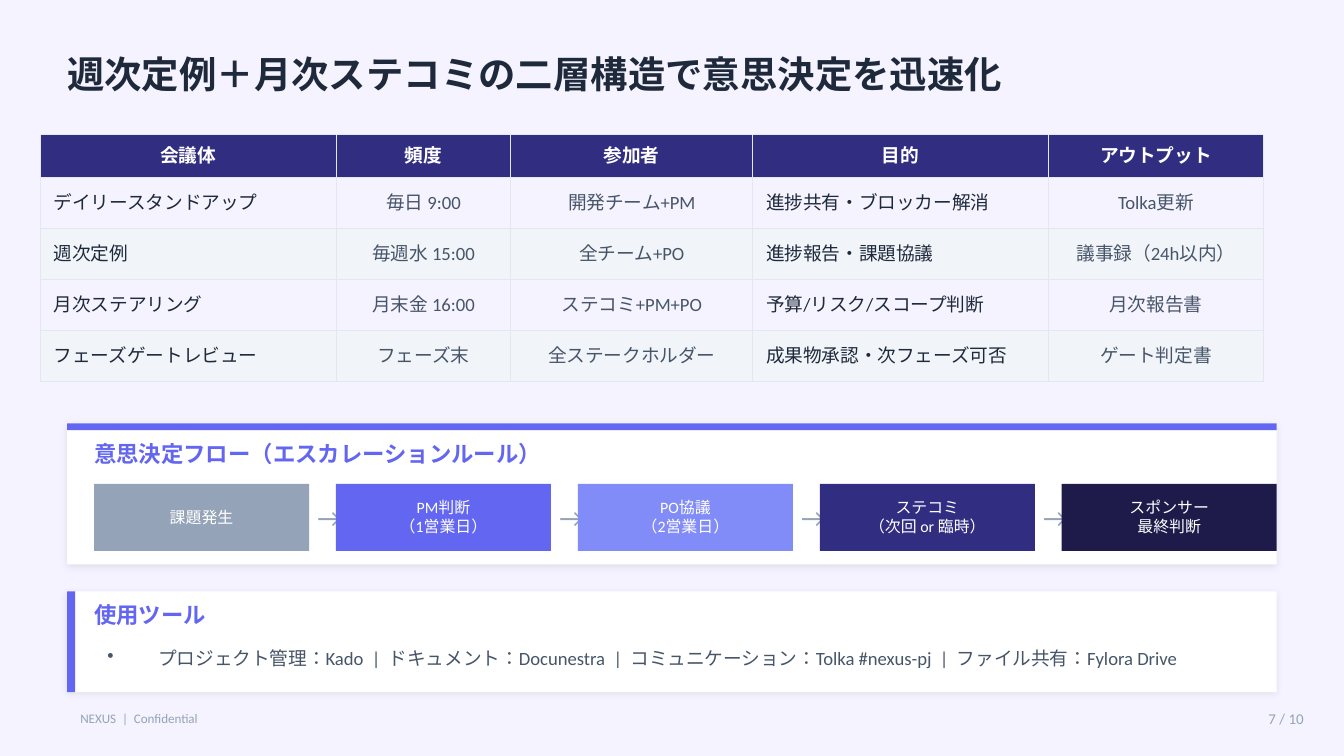
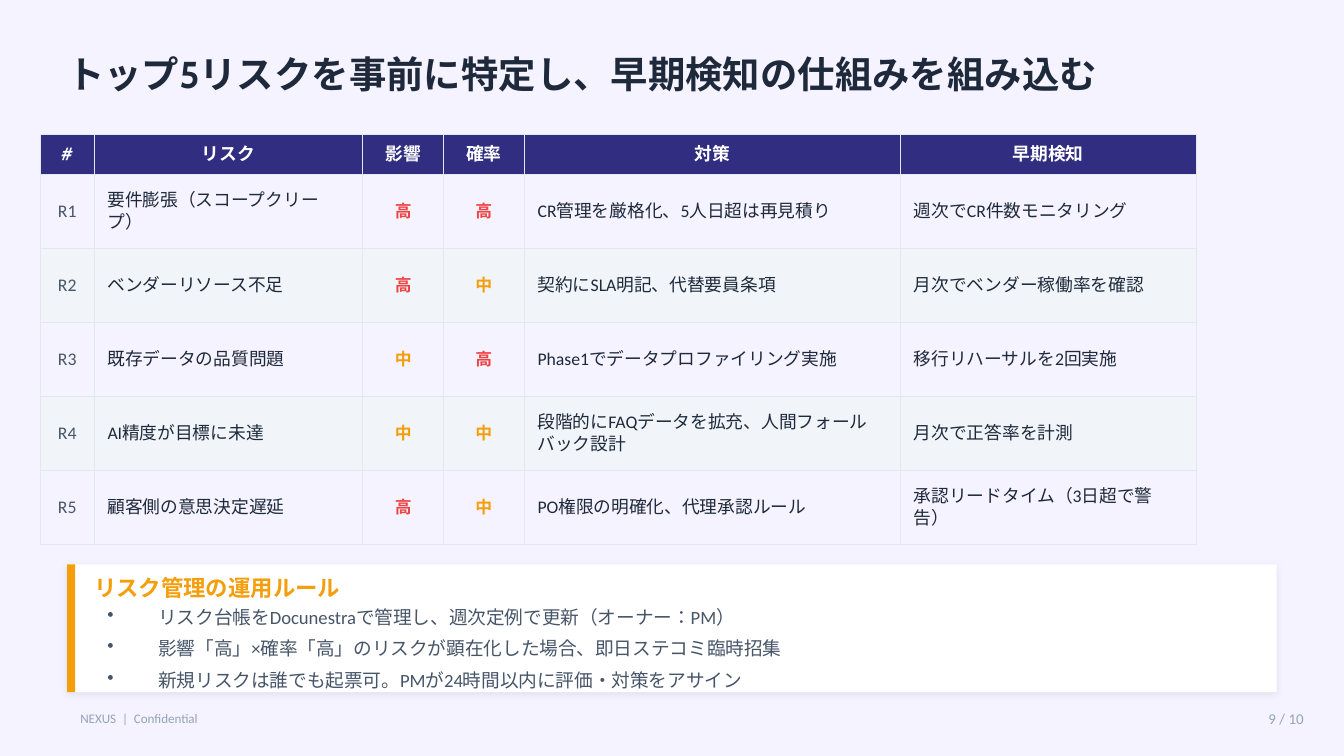
from lxml import etree
from pptx import Presentation
from pptx import util as u
from pptx.dml.color import RGBColor
from pptx.enum import lang, shapes, text
from pptx.oxml.ns import qn

# Shared look
HEAD, BODY = "Cabin", "Calibri"
INK, SLATE, GREY, WHITE = "1E293B", "475569", "94A3B8", "FFFFFF"
NAVY, INDIGO, AMBER, RED = "312E81", "6366F1", "F59E0B", "EF4444"
PAGE, STRIPE, RULE = "F5F3FF", "F1F5F9", "E2E8F0"
ALIGN = {"l": text.PP_ALIGN.LEFT, "c": text.PP_ALIGN.CENTER, "r": text.PP_ALIGN.RIGHT}
LEVELS = {"高": RED, "中": AMBER}


def add_rect(s, box, color, shadow=False):
    sp = s.shapes.add_shape(shapes.MSO_SHAPE.RECTANGLE, *map(u.Inches, box))
    sp.fill.solid()
    sp.fill.fore_color.rgb = RGBColor.from_string(color)
    sp.line.fill.background()
    sp.shadow.inherit = False
    if shadow:
        effects = sp._element.spPr.find(qn("a:effectLst"))
        shade = etree.SubElement(effects, qn("a:outerShdw"), blurRad=str(u.Pt(4)),
                                 dist=str(u.Pt(1)), dir="8100000", algn="bl",
                                 rotWithShape="0")
        tone = etree.SubElement(shade, qn("a:srgbClr"), val="000000")
        etree.SubElement(tone, qn("a:alpha"), val="8000")


def add_text(s, box, lines, size, color, font=BODY, bold=False, align="l",
             inset=False, bullet=False, cell=None):
    """Write lines into a new text box, or into a table cell when one is given."""
    if cell is None:
        tf = s.shapes.add_textbox(*map(u.Inches, box)).text_frame
        tf.word_wrap = True
        tf.vertical_anchor = text.MSO_ANCHOR.MIDDLE
        if not inset:
            tf.margin_left = tf.margin_right = tf.margin_top = tf.margin_bottom = 0
    else:
        tf = cell.text_frame
        cell.vertical_anchor = text.MSO_ANCHOR.MIDDLE
    for i, line in enumerate(lines):
        p = tf.add_paragraph() if i else tf.paragraphs[0]
        p.alignment = ALIGN[align]
        if bullet:
            pPr = p._p.get_or_add_pPr()
            pPr.set("marL", str(u.Inches(0.38)))
            pPr.set("indent", str(u.Inches(-0.38)))
            etree.SubElement(pPr, qn("a:buChar"), char="•")
            p.space_after = u.Pt(5)
        r = p.add_run()
        r.text = line
        r.font.size = u.Pt(size)
        r.font.bold = bold
        r.font.name = font
        r.font.color.rgb = RGBColor.from_string(color)
        r.font.language_id = lang.MSO_LANGUAGE_ID.JAPANESE
        etree.SubElement(r._r.get_or_add_rPr(), qn("a:ea"), typeface=font)


# Slide content
steps = [
    (["課題発生"], GREY),
    (["PM判断", "（1営業日）"], INDIGO),
    (["PO協議", "（2営業日）"], "818CF8"),
    (["ステコミ", "（次回 or 臨時）"], NAVY),
    (["スポンサー", "最終判断"], "1E1B4B"),
]

meetings = {
    "title": "週次定例＋月次ステコミの二層構造で意思決定を迅速化",
    "page": "7 / 10",
    "size": 10,
    "cols": [2.2, 1.3, 1.8, 2.2, 1.6],
    "heights": (0.32, 0.38),
    "aligns": "lcclc",
    "rows": [
        ["会議体", "頻度", "参加者", "目的", "アウトプット"],
        ["デイリースタンドアップ", "毎日 9:00", "開発チーム+PM", "進捗共有・ブロッカー解消", "Tolka更新"],
        ["週次定例", "毎週水 15:00", "全チーム+PO", "進捗報告・課題協議", "議事録（24h以内）"],
        ["月次ステアリング", "月末金 16:00", "ステコミ+PM+PO", "予算/リスク/スコープ判断", "月次報告書"],
        ["フェーズゲートレビュー", "フェーズ末", "全ステークホルダー", "成果物承認・次フェーズ可否", "ゲート判定書"],
    ],
    "cards": [
        {"top": 3.15, "height": 1.05, "bar": (9, 0.05), "color": INDIGO,
         "heading": "意思決定フロー（エスカレーションルール）", "heading_top": 3.25,
         "steps": steps},
        {"top": 4.4, "height": 0.75, "bar": (0.06, 0.75), "color": INDIGO,
         "heading": "使用ツール", "heading_top": 4.45,
         "bullets": ["プロジェクト管理：Kado  |  ドキュメント：Docunestra  |  "
                     "コミュニケーション：Tolka #nexus-pj  |  ファイル共有：Fylora Drive"],
         "bullets_at": (4.72, 0.35)},
    ],
}

risks = {
    "title": "トップ5リスクを事前に特定し、早期検知の仕組みを組み込む",
    "page": "9 / 10",
    "size": 9.5,
    "cols": [0.4, 2, 0.6, 0.6, 2.8, 2.2],
    "heights": (0.3, 0.55),
    "aligns": "clccll",
    "rows": [
        ["#", "リスク", "影響", "確率", "対策", "早期検知"],
        ["R1", "要件膨張（スコープクリープ）", "高", "高", "CR管理を厳格化、5人日超は再見積り", "週次でCR件数モニタリング"],
        ["R2", "ベンダーリソース不足", "高", "中", "契約にSLA明記、代替要員条項", "月次でベンダー稼働率を確認"],
        ["R3", "既存データの品質問題", "中", "高", "Phase1でデータプロファイリング実施", "移行リハーサルを2回実施"],
        ["R4", "AI精度が目標に未達", "中", "中", "段階的にFAQデータを拡充、人間フォールバック設計", "月次で正答率を計測"],
        ["R5", "顧客側の意思決定遅延", "高", "中", "PO権限の明確化、代理承認ルール", "承認リードタイム（3日超で警告）"],
    ],
    "cards": [
        {"top": 4.2, "height": 0.95, "bar": (0.06, 0.95), "color": AMBER,
         "heading": "リスク管理の運用ルール", "heading_top": 4.25,
         "bullets": ["リスク台帳をDocunestraで管理し、週次定例で更新（オーナー：PM）",
                     "影響「高」×確率「高」のリスクが顕在化した場合、即日ステコミ臨時招集",
                     "新規リスクは誰でも起票可。PMが24時間以内に評価・対策をアサイン"],
         "bullets_at": (4.55, 0.55)},
    ],
}

prs = Presentation()
prs.slide_width = u.Inches(10)
prs.slide_height = u.Inches(5.625)

for page in (meetings, risks):
    # Background and title
    s = prs.slides.add_slide(prs.slide_layouts[6])
    s.background.fill.solid()
    s.background.fill.fore_color.rgb = RGBColor.from_string(PAGE)
    add_text(s, (0.5, 0.3, 9, 0.5), [page["title"]], 20, INK, HEAD, True)

    # Table
    rows, cols = page["rows"], page["cols"]
    head_height, row_height = page["heights"]
    height = head_height + row_height * (len(rows) - 1)
    table = s.shapes.add_table(len(rows), len(cols), u.Inches(0.3), u.Inches(1),
                               u.Inches(sum(cols)), u.Inches(height)).table
    table.first_row = table.horz_banding = False
    for j, width in enumerate(cols):
        table.columns[j].width = u.Inches(width)
    for i, row in enumerate(rows):
        table.rows[i].height = u.Inches(row_height if i else head_height)
        for j, value in enumerate(row):
            cell = table.cell(i, j)
            align = page["aligns"][j]
            if i == 0:
                add_text(s, None, [value], page["size"], WHITE, HEAD, True, "c", cell=cell)
            elif value in LEVELS:
                add_text(s, None, [value], 9, LEVELS[value], HEAD, True, "c", cell=cell)
            else:
                add_text(s, None, [value], page["size"], INK if align == "l" else SLATE,
                         align=align, cell=cell)
            # Borders come before the fill in the cell properties
            tcPr = cell._tc.get_or_add_tcPr()
            for side in ("lnL", "lnR", "lnT", "lnB"):
                ln = etree.SubElement(tcPr, qn(f"a:{side}"), w=str(u.Pt(0.5)))
                fill = etree.SubElement(ln, qn("a:solidFill"))
                etree.SubElement(fill, qn("a:srgbClr"), val=RULE)
            if i % 2 and i:
                cell.fill.background()
            else:
                cell.fill.solid()
                cell.fill.fore_color.rgb = RGBColor.from_string(STRIPE if i else NAVY)

    # Cards
    for card in page["cards"]:
        add_rect(s, (0.5, card["top"], 9, card["height"]), WHITE, shadow=True)
        add_rect(s, (0.5, card["top"], *card["bar"]), card["color"])
        add_text(s, (0.7, card["heading_top"], 5, 0.25), [card["heading"]], 12,
                 card["color"], HEAD, True)
        # Escalation steps, with an arrow ahead of each later step
        for i, (lines, color) in enumerate(card.get("steps", [])):
            x = 0.7 + 1.8 * i
            if i:
                add_text(s, (x - 0.2, 3.65, 0.3, 0.4), ["→"], 14, GREY, align="c")
            add_rect(s, (x, 3.6, 1.6, 0.5), color)
            add_text(s, (x + 0.05, 3.62, 1.5, 0.45), lines, 8.5, WHITE, align="c")
        if "bullets" in card:
            top, height = card["bullets_at"]
            add_text(s, (0.7, top, 8.6, height), card["bullets"], 10, SLATE,
                     inset=True, bullet=True)

    # Footer
    add_text(s, (9.1, 5.22, 0.7, 0.25), [page["page"]], 8, GREY, align="r", inset=True)
    add_text(s, (0.5, 5.22, 3, 0.25), ["NEXUS  |  Confidential"], 7, GREY, inset=True)

prs.save("out.pptx")
